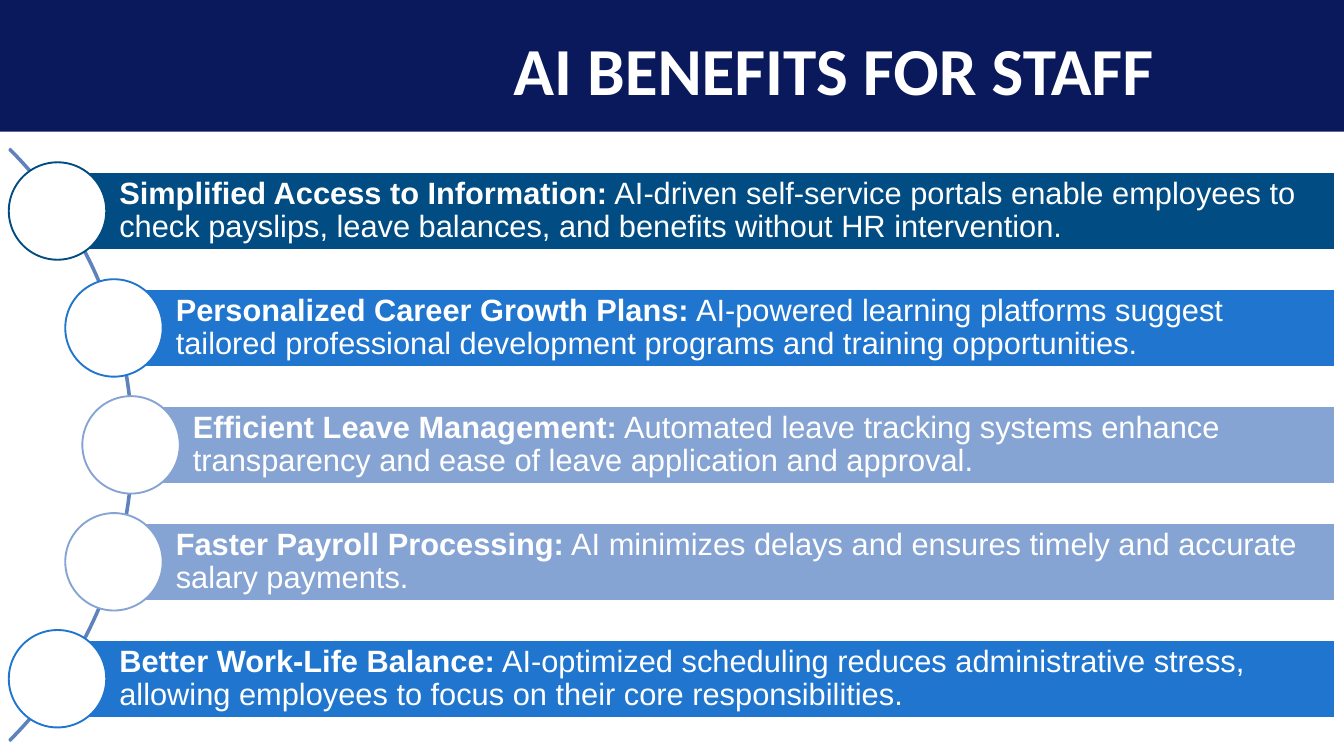
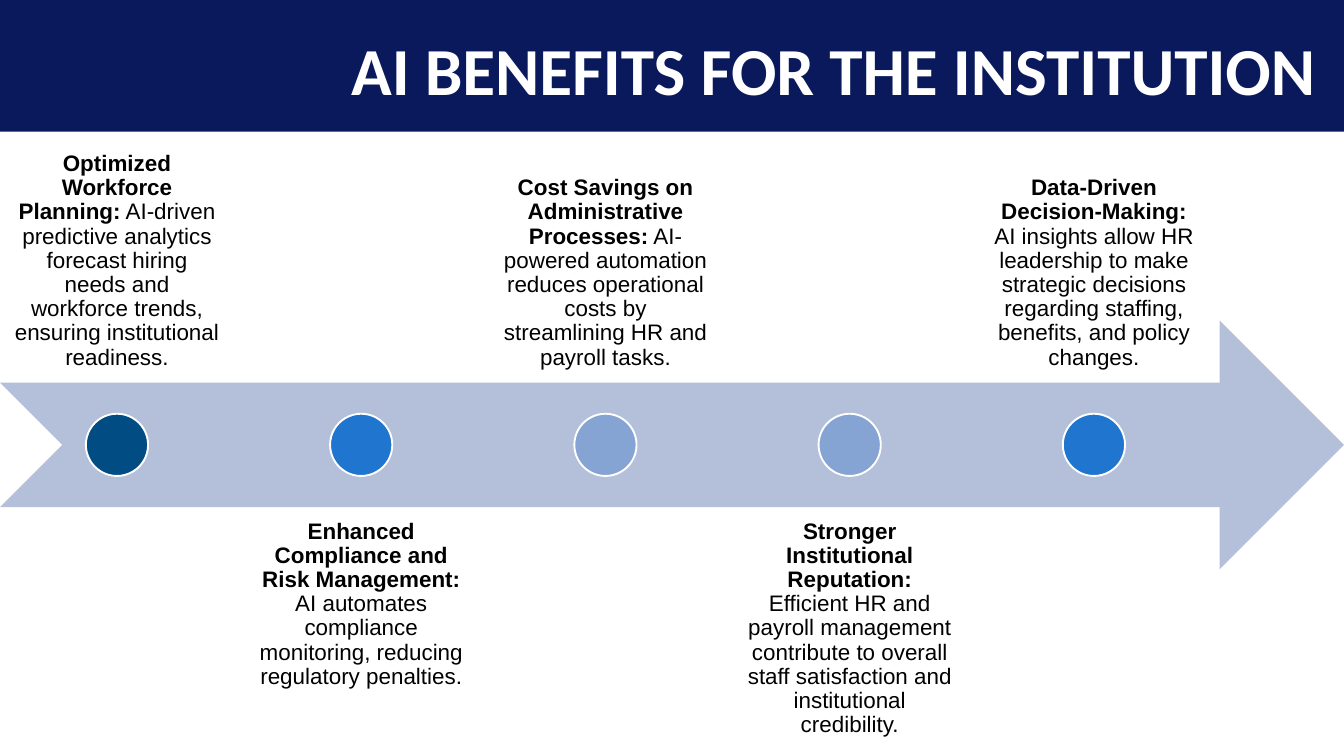
import math
from dataclasses import dataclass

import pptx
import pptx.dml.color
import pptx.enum.shapes
import pptx.enum.text
import pptx.util

SHAPE = pptx.enum.shapes.MSO_SHAPE
ANCHOR = pptx.enum.text.MSO_ANCHOR
ALIGN = pptx.enum.text.PP_ALIGN


@dataclass(frozen=True)
class Theme:
    width: float = 20
    height: float = 11.25
    band_height: float = 1.96
    navy: str = "09195C"
    white: str = "FFFFFF"
    black: str = "000000"
    arc: str = "5E82BB"
    arrow: str = "B4C0D9"
    accents: tuple = ("004C83", "2075CE", "86A4D3", "86A4D3", "2075CE")
    title_font: str = "Calibri"
    body_font: str = "Arial"
    title_size: int = 72
    bar_size: int = 33
    label_size: int = 24
    line_width: int = 2


THEME = Theme()
BODY_TOP = 1.99
BODY_HEIGHT = THEME.height - BODY_TOP
BODY_MIDDLE = BODY_TOP + BODY_HEIGHT / 2

STAFF_BENEFITS = [
    ("Simplified Access to Information:",
     " AI-driven self-service portals enable employees to check payslips, "
     "leave balances, and benefits without HR intervention."),
    ("Personalized Career Growth Plans:",
     " AI-powered learning platforms suggest tailored professional "
     "development programs and training opportunities."),
    ("Efficient Leave Management:",
     " Automated leave tracking systems enhance transparency and ease of "
     "leave application and approval."),
    ("Faster Payroll Processing:",
     " AI minimizes delays and ensures timely and accurate salary payments."),
    ("Better Work-Life Balance:",
     " AI-optimized scheduling reduces administrative stress, allowing "
     "employees to focus on their core responsibilities."),
]

INSTITUTION_BENEFITS = [
    ("Optimized Workforce Planning:",
     " AI-driven predictive analytics forecast hiring needs and workforce "
     "trends, ensuring institutional readiness."),
    ("Enhanced Compliance and Risk Management:",
     " AI automates compliance monitoring, reducing regulatory penalties."),
    ("Cost Savings on Administrative Processes:",
     " AI-powered automation reduces operational costs by streamlining HR "
     "and payroll tasks."),
    ("Stronger Institutional Reputation:",
     " Efficient HR and payroll management contribute to overall staff "
     "satisfaction and institutional credibility."),
    ("Data-Driven Decision-Making:",
     " AI insights allow HR leadership to make strategic decisions regarding "
     "staffing, benefits, and policy changes."),
]


def rgb(color):
    return pptx.dml.color.RGBColor.from_string(color)


def inches(*lengths):
    return [pptx.util.Inches(length) for length in lengths]


def add_shape(slide, kind, box, fill=None, line=None):
    shape = slide.shapes.add_shape(kind, *inches(*box))
    shape.shadow.inherit = False
    if fill:
        shape.fill.solid()
        shape.fill.fore_color.rgb = rgb(fill)
    else:
        shape.fill.background()
    if line:
        shape.line.color.rgb = rgb(line)
        shape.line.width = pptx.util.Pt(THEME.line_width)
    else:
        shape.line.fill.background()
    return shape


def add_circle(slide, center_x, center_y, diameter, fill, line):
    box = (center_x - diameter / 2, center_y - diameter / 2, diameter, diameter)
    add_shape(slide, SHAPE.OVAL, box, fill, line)


def style_paragraph(paragraph, font_name, size, color, align):
    paragraph.alignment = align
    paragraph.font.name = font_name
    paragraph.font.size = pptx.util.Pt(size)
    paragraph.font.color.rgb = rgb(color)


def set_frame(frame, anchor, insets):
    frame.word_wrap = True
    frame.auto_size = pptx.enum.text.MSO_AUTO_SIZE.NONE
    frame.vertical_anchor = anchor
    (frame.margin_left, frame.margin_top,
     frame.margin_right, frame.margin_bottom) = inches(*insets)


def write_benefit(frame, benefit, size, color, align):
    paragraph = frame.paragraphs[0]
    paragraph.line_spacing = 0.9
    style_paragraph(paragraph, THEME.body_font, size, color, align)
    for text, bold in zip(benefit, (True, False)):
        run = paragraph.add_run()
        run.text = text
        run.font.bold = bold


def add_title_slide(presentation, layout, text):
    slide = presentation.slides.add_slide(layout)
    title = slide.shapes.title
    title.left, title.top, title.width, title.height = inches(
        4.81, 0.06, THEME.width - 4.81, 1.92)
    set_frame(title.text_frame, ANCHOR.MIDDLE, (0.1, 0.05, 0.1, 0.05))
    title.text_frame.text = text
    paragraph = title.text_frame.paragraphs[0]
    style_paragraph(paragraph, THEME.title_font, THEME.title_size,
                    THEME.white, ALIGN.CENTER)
    paragraph.font.bold = True
    return slide


def move_band_to_layout(slide, layout):
    band = add_shape(slide, SHAPE.RECTANGLE,
                     (0, 0, THEME.width, THEME.band_height), THEME.navy)
    layout.shapes.element.insert(2, band.element)


def add_arc(slide, diameter, right):
    arc = add_shape(slide, SHAPE.BLOCK_ARC,
                    (right - diameter, BODY_MIDDLE - diameter / 2,
                     diameter, diameter), line=THEME.arc)
    for index, value in enumerate((189, 27, 0.002)):
        arc.adjustments[index] = value


def add_benefit_bars(slide, benefits):
    pitch, bar_height, bar_right = 1.74, 1.16, 19.87
    curve_radius, curve_right = 6.08, 1.95
    add_arc(slide, 12.46, 1.98)
    for row, (benefit, color) in enumerate(zip(benefits, THEME.accents)):
        offset = (row - (len(benefits) - 1) / 2) * pitch
        center_y = BODY_MIDDLE + offset
        center_x = curve_right - curve_radius + math.sqrt(
            curve_radius ** 2 - offset ** 2)
        bar = add_shape(slide, SHAPE.RECTANGLE,
                        (center_x, center_y - bar_height / 2,
                         bar_right - center_x, bar_height),
                        color, THEME.white)
        set_frame(bar.text_frame, ANCHOR.MIDDLE, (0.92, 0.09, 0.09, 0.09))
        write_benefit(bar.text_frame, benefit, THEME.bar_size,
                      THEME.white, ALIGN.LEFT)
        add_circle(slide, center_x, center_y, bar_height * 1.25,
                   THEME.white, color)


def add_benefit_timeline(slide, benefits):
    step_height = BODY_HEIGHT * 0.4
    columns = len(benefits)
    column_width = THEME.width * 0.9 / (columns + 0.05 * (columns - 1))
    pitch = column_width * 1.05
    add_shape(slide, SHAPE.NOTCHED_RIGHT_ARROW,
              (0, BODY_MIDDLE - step_height / 2, THEME.width, step_height),
              THEME.arrow)
    for column, (benefit, color) in enumerate(zip(benefits, THEME.accents)):
        left = 0.01 + column * pitch
        above = column % 2 == 0
        top = BODY_TOP if above else THEME.height - step_height
        label = slide.shapes.add_textbox(
            *inches(left, top, column_width, step_height))
        set_frame(label.text_frame, ANCHOR.BOTTOM if above else ANCHOR.TOP,
                  (0.19,) * 4)
        write_benefit(label.text_frame, benefit, THEME.label_size,
                      THEME.black, ALIGN.CENTER)
        add_circle(slide, left + column_width / 2, BODY_MIDDLE,
                   step_height / 4, color, THEME.white)


def main():
    presentation = pptx.Presentation()
    presentation.slide_width, presentation.slide_height = inches(
        THEME.width, THEME.height)
    layout = presentation.slide_layouts.get_by_name("Title Only")

    staff = add_title_slide(presentation, layout, "AI BENEFITS FOR STAFF")
    move_band_to_layout(staff, layout)
    add_benefit_bars(staff, STAFF_BENEFITS)

    institution = add_title_slide(presentation, layout,
                                  "AI BENEFITS FOR THE INSTITUTION")
    add_benefit_timeline(institution, INSTITUTION_BENEFITS)

    presentation.save("out.pptx")


if __name__ == "__main__":
    main()
